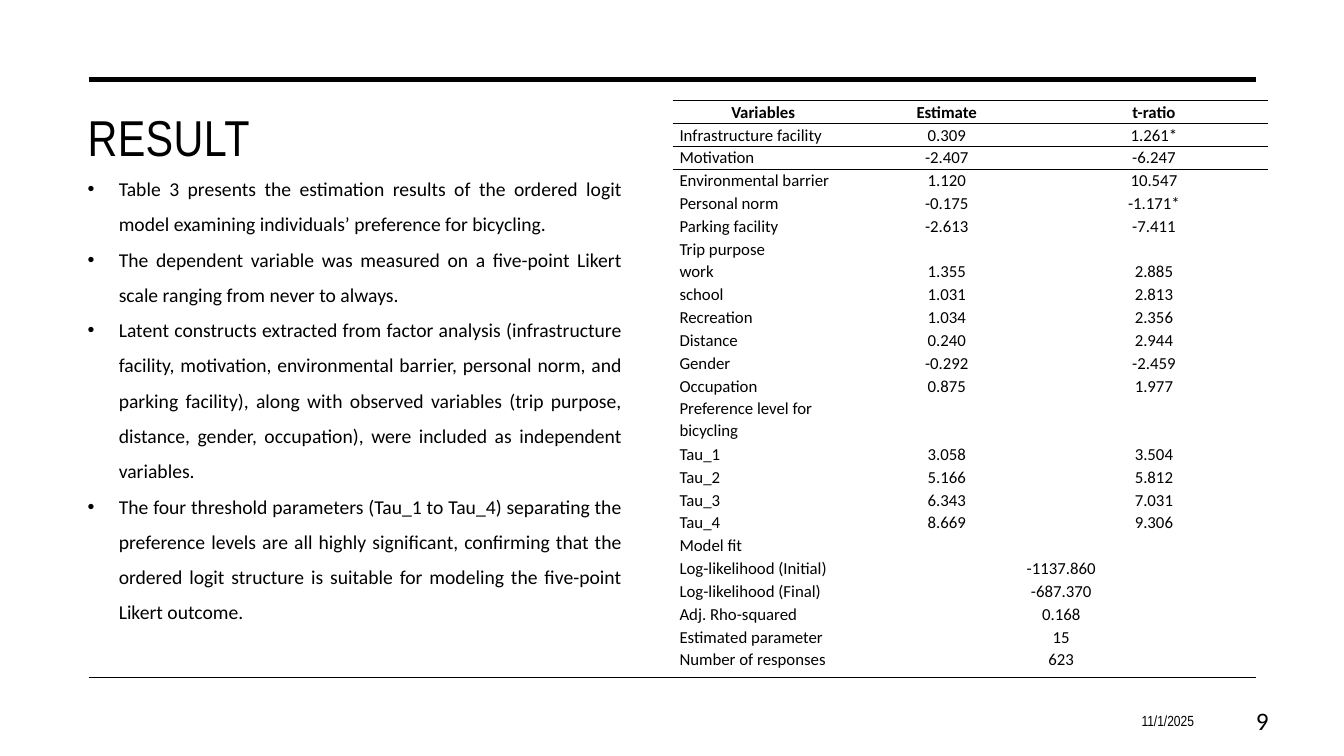
from lxml.etree import SubElement
from pptx import Presentation
from pptx.dml.color import RGBColor
from pptx.enum.shapes import MSO_CONNECTOR
from pptx.enum.text import MSO_ANCHOR as Anchor, PP_ALIGN as Align
from pptx.oxml.ns import qn
from pptx.util import Inches, Pt

BLACK = "000000"
BODY_FONT, DISPLAY_FONT = "Calibri", "Arial Narrow"
NO_STYLE = "{2D5ABB26-0587-4C30-8999-92F81FD0307C}"

TITLE = "RESULT"
DATE, PAGE_NUMBER = "11/1/2025", "9"
FINDINGS = [
    "Table 3 presents the estimation results of the ordered logit model examining "
    "individuals’ preference for bicycling. ",
    "The dependent variable was measured on a five-point Likert scale ranging from "
    "never to always. ",
    "Latent constructs extracted from factor analysis (infrastructure facility, "
    "motivation, environmental barrier, personal norm, and parking facility), along "
    "with observed variables (trip purpose, distance, gender, occupation), were "
    "included as independent variables. ",
    "The four threshold parameters (Tau_1 to Tau_4) separating the preference levels "
    "are all highly significant, confirming that the ordered logit structure is "
    "suitable for modeling the five-point Likert outcome. ",
]
ESTIMATES = [
    ("Variables", "Estimate", "t-ratio"),
    ("Infrastructure facility", "0.309", "1.261*"),
    ("Motivation", "-2.407", "-6.247"),
    ("Environmental barrier", "1.120", "10.547"),
    ("Personal norm", "-0.175", "-1.171*"),
    ("Parking facility", "-2.613", "-7.411"),
    ("Trip purpose", "", ""),
    ("work", "1.355", "2.885"),
    ("school", "1.031", "2.813"),
    ("Recreation", "1.034", "2.356"),
    ("Distance", "0.240", "2.944"),
    ("Gender", "-0.292", "-2.459"),
    ("Occupation", "0.875", "1.977"),
    ("Preference level for bicycling", "", ""),
    ("Tau_1", "3.058", "3.504"),
    ("Tau_2", "5.166", "5.812"),
    ("Tau_3", "6.343", "7.031"),
    ("Tau_4", "8.669", "9.306"),
]
MODEL_FIT = [
    ("Model fit", ""),
    ("Log-likelihood (Initial)", "-1137.860"),
    ("Log-likelihood (Final)", "-687.370"),
    ("Adj. Rho-squared", "0.168"),
    ("Estimated parameter", "15"),
    ("Number of responses", "623"),
]
DOUBLE_ROW = 13  # its label wraps onto a second line
RULED_ROWS = {0: ("a:lnT", "a:lnB"), 1: ("a:lnT", "a:lnB"), 2: ("a:lnT",)}

LEFT, RULE_LEFT, RULE_RIGHT = 0.77, 0.88, 12.46
RULES = [(0.79, 3.5), (6.72, 1)]
TABLE_LEFT, TABLE_TOP, TABLE_HEIGHT = 6.67, 1, 5.66
COLUMN_WIDTHS = (1.8, 1.84, 2.27)
FOOTER_TOP, FOOTER_HEIGHT = 6.95, 0.4


def color(value):
    return RGBColor.from_string(value)


def write(para, text, size=12, font=BODY_FONT, bold=False, align=Align.LEFT,
          line_spacing=None, after=0, tracking=None, bullet=None, indent=0.31):
    para.alignment = align
    para.space_after = Pt(after)
    if line_spacing:
        para.line_spacing = line_spacing
    if bullet:
        props = para._p.get_or_add_pPr()
        props.set("marL", str(Inches(indent)))
        props.set("indent", str(-Inches(indent)))
        SubElement(props, qn("a:buFont")).set("typeface", "Arial")
        SubElement(props, qn("a:buChar")).set("char", bullet)
    if not text:
        SubElement(para._p, qn("a:endParaRPr")).set("sz", str(size * 100))
        return
    span = para.add_run()
    span.text = text
    span.font.size, span.font.name, span.font.bold = Pt(size), font, bold
    span.font.color.rgb = color(BLACK)
    if tracking:
        span._r.get_or_add_rPr().set("spc", str(round(tracking * 100)))


def add_text(page, area, lines, anchor=Anchor.TOP, **text_format):
    frame = page.shapes.add_textbox(*map(Inches, area)).text_frame
    frame.word_wrap = True
    frame.vertical_anchor = anchor
    for index, line in enumerate(lines):
        para = frame.add_paragraph() if index else frame.paragraphs[0]
        write(para, line, **text_format)


def add_rule(page, top, weight):
    rule = page.shapes.add_connector(
        MSO_CONNECTOR.STRAIGHT, Inches(RULE_LEFT), Inches(top),
        Inches(RULE_RIGHT), Inches(top))
    rule.line.color.rgb = color(BLACK)
    rule.line.width = Pt(weight)
    SubElement(rule._element.spPr, qn("a:effectLst"))


def add_border(cell, side):
    border = SubElement(cell._tc.get_or_add_tcPr(), qn(side), w=str(Pt(1)))
    fill = SubElement(border, qn("a:solidFill"))
    SubElement(fill, qn("a:srgbClr")).set("val", BLACK)


def add_results_table(page):
    rows = ESTIMATES + MODEL_FIT
    row_height = TABLE_HEIGHT / (len(rows) + 1)
    table = page.shapes.add_table(
        len(rows), len(COLUMN_WIDTHS), Inches(TABLE_LEFT), Inches(TABLE_TOP),
        Inches(sum(COLUMN_WIDTHS)), Inches(TABLE_HEIGHT)).table
    table.first_row = table.horz_banding = False
    table._tbl.tblPr.find(qn("a:tableStyleId")).text = NO_STYLE
    for column, width in zip(table.columns, COLUMN_WIDTHS):
        column.width = Inches(width)
    for row, values in enumerate(rows):
        table.rows[row].height = Inches(row_height * (2 if row == DOUBLE_ROW else 1))
        if len(values) == 2:
            table.cell(row, 1).merge(table.cell(row, 2))
        for column in range(len(COLUMN_WIDTHS)):
            cell = table.cell(row, column)
            cell.margin_left = cell.margin_right = Inches(0.07)
            cell.margin_top = cell.margin_bottom = 0
            for side in RULED_ROWS.get(row, ()):
                add_border(cell, side)
            cell.fill.background()
            text = values[column] if column < len(values) else ""
            centred = row == 0 or column > 0
            write(cell.text_frame.paragraphs[0], text, bold=row == 0,
                  align=Align.CENTER if centred else Align.LEFT,
                  line_spacing=1.07, after=8)


def main():
    deck = Presentation()
    deck.slide_width, deck.slide_height = Inches(13.33), Inches(7.5)
    page = deck.slides.add_slide(deck.slide_layouts[6])
    for top, weight in RULES:
        add_rule(page, top, weight)
    add_text(page, (LEFT, 1, RULE_RIGHT - LEFT, 0.59), [TITLE],
             size=36, font=DISPLAY_FONT, tracking=0.3)
    add_results_table(page)
    add_text(page, (9.15, FOOTER_TOP, 2.79, FOOTER_HEIGHT), [DATE],
             anchor=Anchor.MIDDLE, size=10.5, font=DISPLAY_FONT, align=Align.RIGHT)
    add_text(page, (11.94, FOOTER_TOP, 0.74, FOOTER_HEIGHT), [PAGE_NUMBER],
             anchor=Anchor.MIDDLE, size=18, align=Align.RIGHT)
    add_text(page, (LEFT, 1.59, 5.5, 4.65), FINDINGS, size=14,
             align=Align.JUSTIFY, line_spacing=1.5, bullet="•")
    deck.save("out.pptx")


if __name__ == "__main__":
    main()
